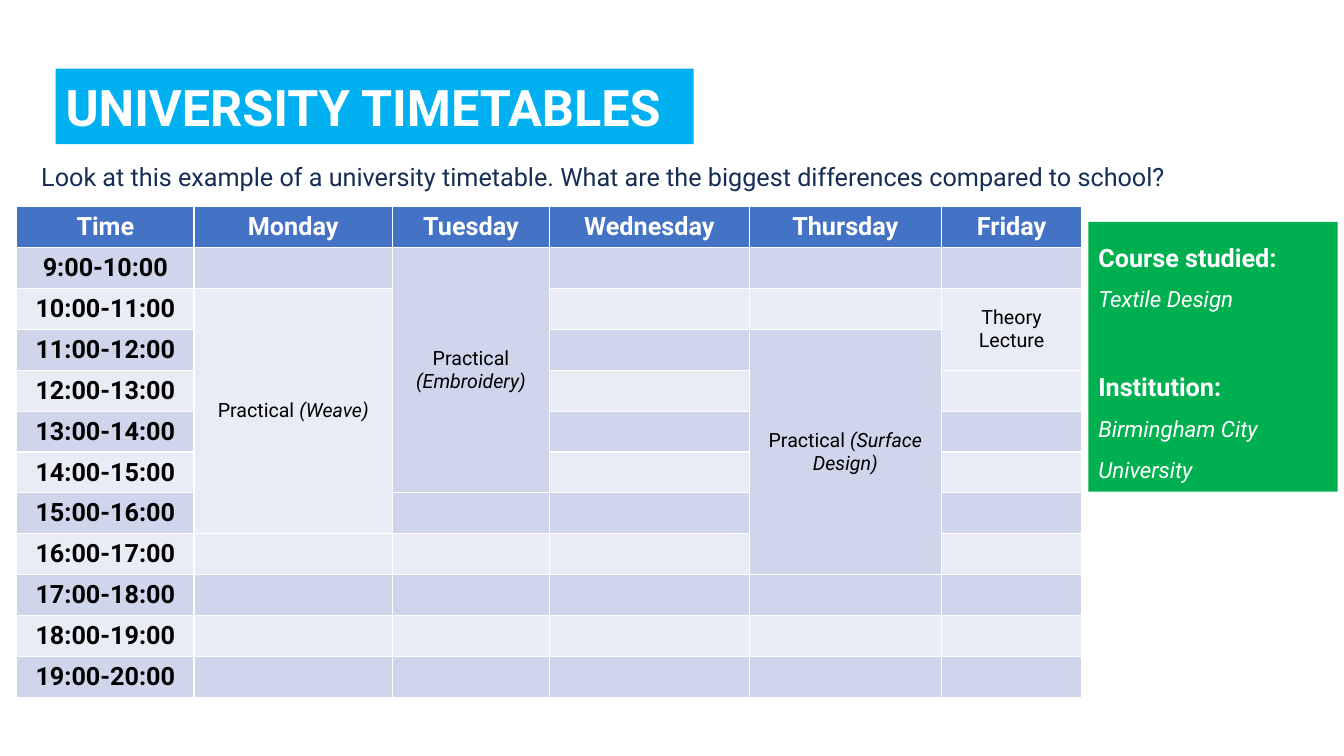
"""Build a slide with an example university timetable."""
import dataclasses

import pptx
import pptx.dml.color
import pptx.enum.shapes
import pptx.enum.text
import pptx.util

Cm = pptx.util.Cm
Pt = pptx.util.Pt
ANCHOR = pptx.enum.text.MSO_ANCHOR
ALIGN = pptx.enum.text.PP_ALIGN
AUTO = pptx.enum.text.MSO_AUTO_SIZE


@dataclasses.dataclass(frozen=True)
class Theme:
    """Hold the colours, font and type sizes of the slide."""
    font: str = "Roboto"
    white: str = "FFFFFF"
    black: str = "000000"
    navy: str = "162D56"
    blue: str = "4472C4"
    sky: str = "00B0F0"
    green: str = "00B050"
    bands: tuple = ("CFD5EA", "E9EBF5")
    title: int = 36
    text: int = 18
    detail: int = 16
    entry: int = 14


THEME = Theme()
DAYS = ["Monday", "Tuesday", "Wednesday", "Thursday", "Friday"]
COL_WIDTHS = [4.47, 5, 3.96, 5.03, 4.85, 3.53]
ROW_HEIGHT = 1.03
FIRST_HOUR, LAST_HOUR = 9, 20
SESSIONS = [
    ("Monday", 10, 16, "Practical ", "(Weave)"),
    ("Tuesday", 9, 15, "Practical ", "(Embroidery)"),
    ("Thursday", 11, 17, "Practical ", "(Surface Design)"),
    ("Friday", 10, 12, "Theory Lecture", ""),
]
COURSE = [("Course studied:", "Textile Design"),
          ("Institution:", "Birmingham City University")]


def apply(obj, values):
    """Set each attribute named in a dict of format values."""
    for name, value in values.items():
        setattr(obj, name, value)


def paint(obj, colour):
    """Give a shape or cell a solid fill."""
    obj.fill.solid()
    obj.fill.fore_color.rgb = pptx.dml.color.RGBColor.from_string(colour)


def add_run(p, text, size, colour, **style):
    """Add a formatted run to a paragraph."""
    r = p.add_run()
    r.text = text
    apply(r.font, {"name": THEME.font, "size": Pt(size),
                   "bold": False, "italic": False} | style)
    r.font.color.rgb = pptx.dml.color.RGBColor.from_string(colour)


def place(sp, left, top, width, height):
    """Move and size a shape in centimetres."""
    apply(sp, {"left": Cm(left), "top": Cm(top),
               "width": Cm(width), "height": Cm(height)})


def add_title(s, text):
    """Turn the title placeholder into a filled banner."""
    sp = s.shapes.title
    place(sp, 1.4, 1.73, 16.08, 1.9)
    paint(sp, THEME.sky)
    apply(sp.text_frame, {"word_wrap": True, "auto_size": AUTO.NONE,
                          "vertical_anchor": ANCHOR.MIDDLE})
    p = sp.text_frame.paragraphs[0]
    p.alignment = ALIGN.LEFT
    add_run(p, text, THEME.title, THEME.white, bold=True)


def add_question(s, text):
    """Add the question above the timetable."""
    tf = s.shapes.add_textbox(Cm(0.79), Cm(3.94), Cm(30.96), Cm(1.02)).text_frame
    apply(tf, {"word_wrap": True, "auto_size": AUTO.SHAPE_TO_FIT_TEXT})
    add_run(tf.paragraphs[0], text, THEME.text, THEME.navy)


def centre_cell(cell):
    """Centre a cell both ways and return its paragraph."""
    cell.vertical_anchor = ANCHOR.MIDDLE
    p = cell.text_frame.paragraphs[0]
    p.alignment = ALIGN.CENTER
    return p


def add_timetable(s):
    """Add the banded timetable and merge the hours of each session."""
    hours = range(FIRST_HOUR, LAST_HOUR)
    rows = len(hours) + 1
    table = s.shapes.add_table(rows, len(COL_WIDTHS), Cm(0.42), Cm(5.21),
                               Cm(sum(COL_WIDTHS)), Cm(rows * ROW_HEIGHT)).table
    for col, width in zip(table.columns, COL_WIDTHS):
        col.width = Cm(width)
    for i, row in enumerate(table.rows):
        row.height = Cm(ROW_HEIGHT)
        for cell in row.cells:
            paint(cell, THEME.bands[(i - 1) % 2] if i else THEME.blue)
            apply(cell, {"margin_top": Cm(0.1), "margin_bottom": Cm(0.1)})
    for j, name in enumerate(["Time"] + DAYS):
        add_run(centre_cell(table.cell(0, j)), name, THEME.text,
                THEME.white, bold=True)
    for i, hour in enumerate(hours, 1):
        add_run(centre_cell(table.cell(i, 0)), f"{hour}:00-{hour + 1}:00",
                THEME.text, THEME.black, bold=True)
    for day, start, end, kind, topic in SESSIONS:
        j = DAYS.index(day) + 1
        cell = table.cell(start - FIRST_HOUR + 1, j)
        cell.merge(table.cell(end - FIRST_HOUR, j))
        p = centre_cell(cell)
        add_run(p, kind, THEME.entry, THEME.black)
        if topic:
            add_run(p, topic, THEME.entry, THEME.black, italic=True)


def add_course_panel(s):
    """Add the panel that names the course and institution."""
    sp = s.shapes.add_shape(pptx.enum.shapes.MSO_SHAPE.RECTANGLE,
                            Cm(27.43), Cm(5.59), Cm(6.28), Cm(6.8))
    sp.shadow.inherit = False
    paint(sp, THEME.green)
    sp.line.fill.background()
    tf = sp.text_frame
    apply(tf, {"word_wrap": True, "auto_size": AUTO.SHAPE_TO_FIT_TEXT,
               "vertical_anchor": ANCHOR.TOP})
    for i, (label, value) in enumerate(COURSE):
        p = tf.add_paragraph() if i else tf.paragraphs[0]
        detail = tf.add_paragraph()
        for para in (p, detail):
            apply(para, {"alignment": ALIGN.LEFT, "line_spacing": 1.5})
        if i:
            p.space_before = Pt(31.6)
        add_run(p, label, THEME.text, THEME.white, bold=True)
        add_run(detail, value, THEME.detail, THEME.white, italic=True)


def main():
    """Build and save the slide."""
    prs = pptx.Presentation()
    apply(prs, {"slide_width": Cm(33.87), "slide_height": Cm(19.05)})
    s = prs.slides.add_slide(prs.slide_layouts.get_by_name("Title Only"))
    add_title(s, "UNIVERSITY TIMETABLES")
    add_question(s, "Look at this example of a university timetable. "
                    "What are the biggest differences compared to school?")
    add_timetable(s)
    add_course_panel(s)
    prs.save("out.pptx")


if __name__ == "__main__":
    main()
